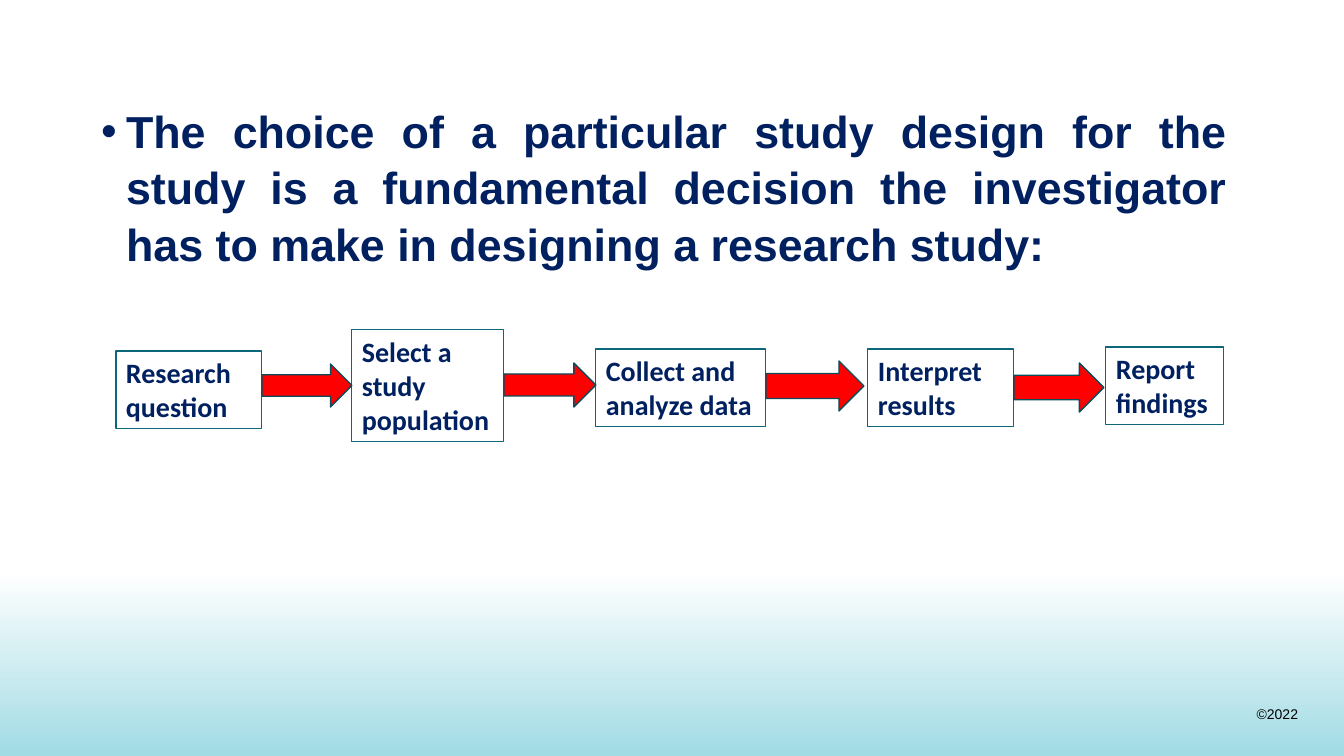
from dataclasses import dataclass

from pptx import Presentation
from pptx.dml.color import RGBColor
from pptx.enum.shapes import MSO_SHAPE
from pptx.enum.text import MSO_ANCHOR, PP_ALIGN
from pptx.util import Pt

PX = 914400 / 100.8


@dataclass(frozen=True)
class Theme:
    """Colours, fonts and type sizes of the deck."""
    white: str = "FFFFFF"
    black: str = "000000"
    navy: str = "002060"
    teal: str = "0E6779"
    dark_teal: str = "0A4C5A"
    red: str = "FF0000"
    aqua: str = "A1DBE4"
    body_font: str = "Arial"
    step_font: str = "Calibri"
    body_size: int = 32
    step_size: int = 20
    note_size: int = 10


THEME = Theme()
STEPS = [
    ("Research question", (25, 21, 146, 78)),
    ("Select a study population", (261, 0, 152, 112)),
    ("Collect and analyze data", (505, 19, 170, 78)),
    ("Interpret results", (777, 19, 146, 78)),
    ("Report findings", (1015, 17, 118, 78)),
]
ARROWS = [(34, 90, 43), (33, 92, 44), (31, 98, 50), (33, 90, 49)]


def px(*lengths):
    """Turn pixel lengths into EMU."""
    return [round(n * PX) for n in lengths]


def rgb(color):
    """Return a hex string as a colour."""
    return RGBColor.from_string(color)


def apply(target, values):
    """Set each named attribute on the target."""
    for name, value in values.items():
        setattr(target, name, value)


def write(tf, text, font, size, color, bold, align):
    """Write one formatted paragraph into a text frame."""
    p = tf.paragraphs[0]
    p.alignment = align
    r = p.add_run()
    r.text = text
    apply(r.font, {"name": font, "size": Pt(size), "bold": bold})
    r.font.color.rgb = rgb(color)
    return p


def add_block(slide, kind, box, fill, line, width):
    """Add a flat preset shape with a fill and an outline."""
    sp = slide.shapes.add_shape(kind, *px(*box))
    sp.shadow.inherit = False
    sp.fill.solid()
    sp.fill.fore_color.rgb = rgb(fill)
    sp.line.color.rgb = rgb(line)
    sp.line.width = Pt(width)
    return sp


def add_band(slide, box):
    """Draw the gradient band with the copyright note in its corner."""
    x, y, w, h = box
    sp = slide.shapes.add_shape(MSO_SHAPE.RECTANGLE, *px(*box))
    sp.shadow.inherit = False
    sp.line.fill.background()
    sp.fill.gradient()
    sp.fill.gradient_angle = 270
    stops = zip(sp.fill.gradient_stops, (THEME.white, THEME.aqua))
    for position, (stop, color) in enumerate(stops):
        stop.position = position
        stop.color.rgb = rgb(color)
    note = slide.shapes.add_textbox(*px(x + w - 98, y + h - 55, 62, 27))
    note.text_frame.word_wrap = False
    write(note.text_frame, "©2022", THEME.body_font, THEME.note_size,
          THEME.black, False, PP_ALIGN.RIGHT)


def add_statement(slide, box):
    """Fill the body placeholder with the bulleted statement."""
    body = slide.placeholders[1]
    apply(body, dict(zip(("left", "top", "width", "height"), px(*box))))
    tf = body.text_frame
    apply(tf, {"word_wrap": True, "vertical_anchor": MSO_ANCHOR.TOP})
    p = write(tf, "The choice of a particular study design for the study is "
              "a fundamental decision the investigator has to make in "
              "designing a research study:", THEME.body_font,
              THEME.body_size, THEME.navy, True, PP_ALIGN.JUSTIFY)
    apply(p, {"space_before": Pt(10), "line_spacing": 1.05})
    indent = px(25)[0]
    pPr = p._p.get_or_add_pPr()
    pPr.set("marL", str(indent))
    pPr.set("indent", str(-indent))


def add_flow(slide, box):
    """Draw the study steps and the block arrows between them."""
    x, y = box[:2]
    for text, (dx, dy, w, h) in STEPS:
        sp = add_block(slide, MSO_SHAPE.RECTANGLE, (x + dx, y + dy, w, h),
                       THEME.white, THEME.teal, 0.75)
        tf = sp.text_frame
        apply(tf, {"word_wrap": True, "vertical_anchor": MSO_ANCHOR.TOP})
        write(tf, text, THEME.step_font, THEME.step_size, THEME.navy, True,
              PP_ALIGN.LEFT)
    for (_, (dx, _, step_w, _)), (dy, w, h) in zip(STEPS, ARROWS):
        add_block(slide, MSO_SHAPE.RIGHT_ARROW,
                  (x + dx + step_w, y + dy, w, h),
                  THEME.red, THEME.dark_teal, 1)


def main():
    """Build the deck and save it."""
    prs = Presentation()
    prs.slide_width, prs.slide_height = px(1344, 756)
    slide = prs.slides.add_slide(prs.slide_layouts[1])
    title = slide.shapes.title._element
    title.getparent().remove(title)
    add_band(slide, (0, 572, 1344, 184))
    add_statement(slide, (91, 96, 1147, 453))
    add_flow(slide, (91, 330, 1147, 112))
    prs.save("out.pptx")


if __name__ == "__main__":
    main()
